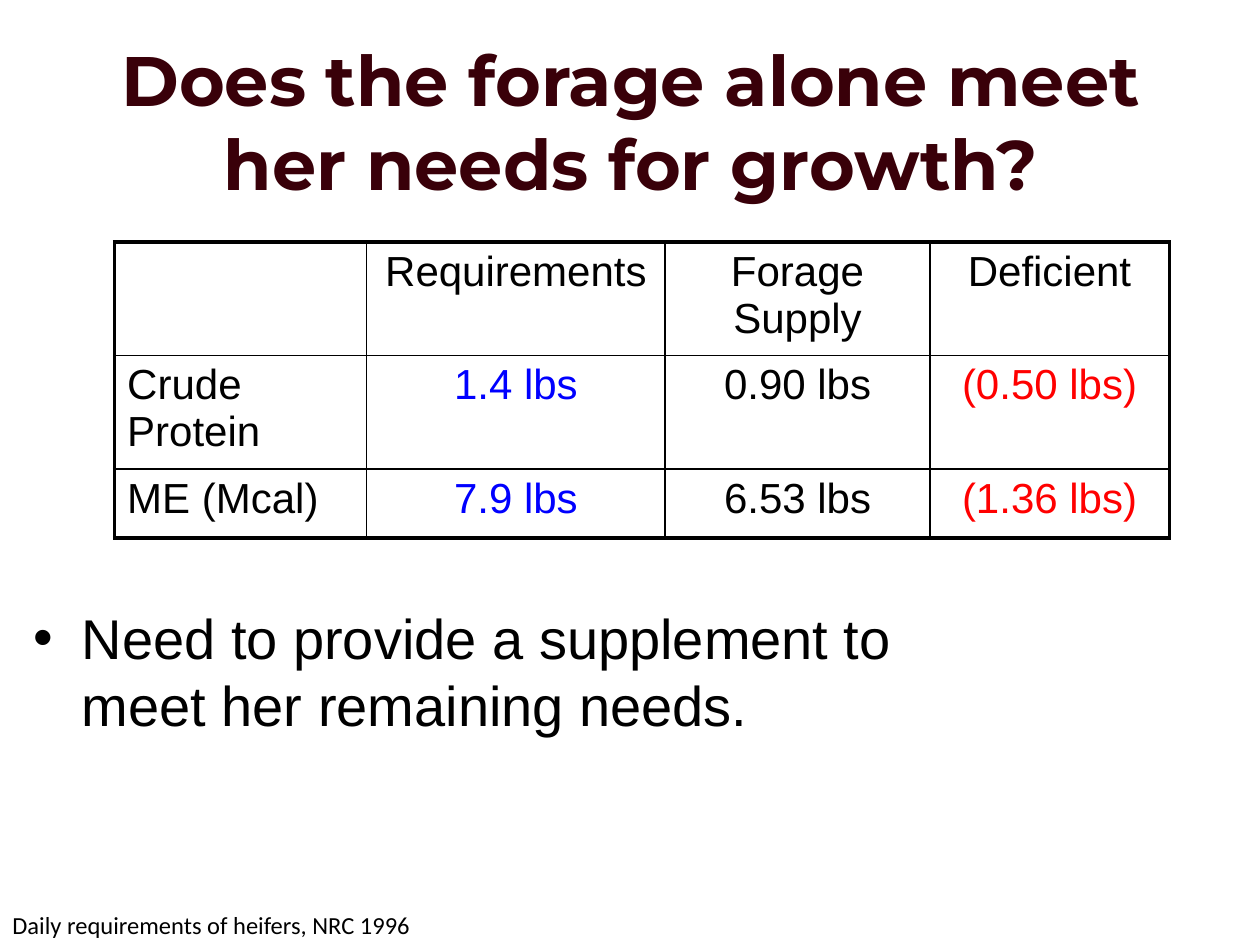
from lxml import etree
from pptx import Presentation
from pptx.dml.color import RGBColor
from pptx.enum.text import MSO_ANCHOR, PP_ALIGN
from pptx.oxml.ns import qn
from pptx.util import Inches, Pt

LEFT, CENTER = PP_ALIGN.LEFT, PP_ALIGN.CENTER
TOP, MIDDLE = MSO_ANCHOR.TOP, MSO_ANCHOR.MIDDLE
BLACK = RGBColor(0x00, 0x00, 0x00)
BLUE = RGBColor(0x00, 0x00, 0xFF)
RED = RGBColor(0xFF, 0x00, 0x00)
MAROON = RGBColor(0x39, 0x00, 0x09)

COLUMNS = [2, 2.37, 2.1, 1.9]
ROWS = [0.59, 0.54, 0.55]
COLUMN_COLORS = [BLACK, BLUE, BLACK, RED]
NEEDS = [
    ["", "Requirements", "Forage Supply", "Deficient"],
    ["Crude Protein", "1.4 lbs", "0.90 lbs", "(0.50 lbs)"],
    ["ME (Mcal)", "7.9 lbs", "6.53 lbs", "(1.36 lbs)"],
]


class Deck:
    title = {"name": "Montserrat", "size": Pt(40), "bold": True}
    body = {"name": "Arial", "size": Pt(32)}
    cell = {"name": "Arial", "size": Pt(24)}
    note = {"name": "Calibri", "size": Pt(14)}
    thin, thick = 1, 2.25

    def __init__(self, prs):
        self.s = prs.slides.add_slide(prs.slide_layouts[6])

    def add_run(self, p, text, style, color=BLACK, align=LEFT):
        p.alignment = align
        r = p.add_run()
        r.text = text
        for key, value in style.items():
            setattr(r.font, key, value)
        r.font.color.rgb = color

    def text(self, box, text, style, color=BLACK, align=LEFT,
             anchor=TOP, wrap=True, bullet=False):
        sp = self.s.shapes.add_textbox(*[Inches(v) for v in box])
        tf = sp.text_frame
        tf.word_wrap = wrap
        tf.vertical_anchor = anchor
        p = tf.paragraphs[0]
        if bullet:
            self.bullet(p)
        self.add_run(p, text, style, color, align)

    def bullet(self, p):
        pPr = p._p.get_or_add_pPr()
        pPr.set("marL", str(Inches(0.38)))
        pPr.set("indent", str(Inches(-0.38)))
        etree.SubElement(pPr, qn("a:buFont")).set("typeface", "Arial")
        etree.SubElement(pPr, qn("a:buChar")).set("char", "•")

    def border(self, cell, sides):
        tcPr = cell._tc.get_or_add_tcPr()
        for i, (side, width) in enumerate(sides.items()):
            ln = etree.Element(qn("a:ln" + side), w=str(Pt(width)))
            fill = etree.SubElement(ln, qn("a:solidFill"))
            etree.SubElement(fill, qn("a:srgbClr")).set("val", str(BLACK))
            tcPr.insert(i, ln)

    def table(self, left, top, columns, rows, data, colors):
        frame = self.s.shapes.add_table(
            len(rows), len(columns), Inches(left), Inches(top),
            Inches(sum(columns)), Inches(sum(rows)))
        table = frame.table
        table.first_row = table.horz_banding = False
        for column, width in zip(table.columns, columns):
            column.width = Inches(width)
        for row, height in zip(table.rows, rows):
            row.height = Inches(height)
        last_row, last_col = len(rows) - 1, len(columns) - 1
        for i, values in enumerate(data):
            for j, value in enumerate(values):
                cell = table.cell(i, j)
                cell.fill.background()
                outer = {"L": j == 0, "R": j == last_col,
                         "T": i == 0, "B": i == last_row}
                self.border(cell, {side: self.thick if edge else self.thin
                                   for side, edge in outer.items()})
                if value:
                    self.add_run(cell.text_frame.paragraphs[0], value, self.cell,
                                 colors[j] if i else BLACK, CENTER if j else LEFT)


def main():
    prs = Presentation()
    prs.slide_width, prs.slide_height = Inches(10), Inches(7.5)
    deck = Deck(prs)
    deck.text((0.42, 0.33, 9.17, 1.25),
              "Does the forage alone meet her needs for growth?",
              deck.title, MAROON, CENTER, MIDDLE)
    deck.table(0.91, 1.92, COLUMNS, ROWS, NEEDS, COLUMN_COLORS)
    deck.text((0, 7.17, 3.42, 0.33), "Daily requirements of heifers, NRC 1996",
              deck.note, wrap=False)
    deck.text((0.17, 4.74, 7.83, 2.75),
              "Need to provide a supplement to meet her remaining needs.",
              deck.body, bullet=True)
    prs.save("out.pptx")


if __name__ == "__main__":
    main()
